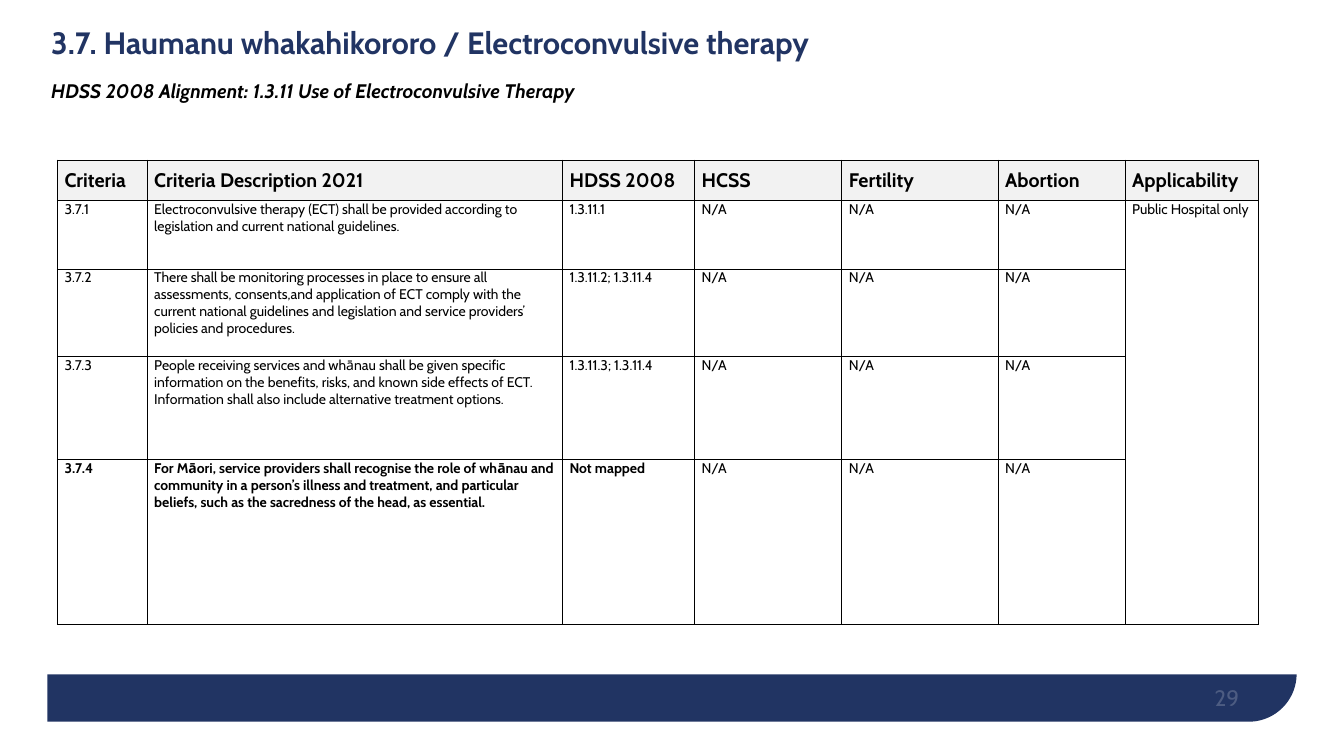
from lxml.etree import SubElement
from pptx import Presentation
from pptx.dml.color import RGBColor
from pptx.enum.shapes import MSO_SHAPE
from pptx.enum.text import MSO_ANCHOR, PP_ALIGN
from pptx.oxml.ns import qn
from pptx.util import Inches, Pt

FONT = "Cabin"
NAVY = RGBColor(0x21, 0x34, 0x63)
WHITE = RGBColor(0xFF, 0xFF, 0xFF)
BLACK = RGBColor(0, 0, 0)
HEADER_GREY = RGBColor(0xF2, 0xF2, 0xF2)

SLIDE_WIDTH, SLIDE_HEIGHT = 13.33, 7.5
BAND_TOP = 6.69
COLUMN_WIDTHS = [0.89, 4.12, 1.31, 1.46, 1.55, 1.26, 1.32]
ROW_HEIGHTS = [0.4, 0.68, 0.87, 1.02, 1.64]

HEADINGS = ["Criteria", "Criteria Description 2021", "HDSS 2008", "HCSS",
            "Fertility", "Abortion", "Applicability"]
CRITERIA = [
    ("3.7.1", "Electroconvulsive therapy (ECT) shall be provided according to "
     "legislation and current national guidelines.", "1.3.11.1"),
    ("3.7.2", "There shall be monitoring processes in place to ensure all "
     "assessments, consents,and application of ECT comply with the current "
     "national guidelines and legislation and service providers’ policies and "
     "procedures.", "1.3.11.2; 1.3.11.4"),
    ("3.7.3", "People receiving services and whānau shall be given specific "
     "information on the benefits, risks, and known side effects of ECT. "
     "Information shall also include alternative treatment options.",
     "1.3.11.3; 1.3.11.4"),
    ("3.7.4", "For Māori, service providers shall recognise the role of whānau "
     "and community in a person’s illness and treatment, and particular "
     "beliefs, such as the sacredness of the head, as essential.",
     "Not mapped"),
]


def style_paragraph(paragraph, size, color, bold=False, italic=False):
    """Set the font of a whole paragraph."""
    font = paragraph.font
    font.name, font.size = FONT, Pt(size)
    font.bold, font.italic = bold, italic
    font.color.rgb = color


def add_panel(slide, preset, left, top, width, height, color):
    """Add a plain filled shape without outline or shadow."""
    panel = slide.shapes.add_shape(preset, Inches(left), Inches(top),
                                   Inches(width), Inches(height))
    panel.shadow.inherit = False
    panel.fill.solid()
    panel.fill.fore_color.rgb = color
    panel.line.fill.background()
    return panel


def add_text_frame(slide, left, top, width, height, anchor):
    """Add a wrapping text box and return its text frame."""
    box = slide.shapes.add_textbox(Inches(left), Inches(top),
                                   Inches(width), Inches(height))
    frame = box.text_frame
    frame.word_wrap = True
    frame.vertical_anchor = anchor
    return frame


def add_footer(slide, page):
    """Add the navy band with its rounded corner and the page number."""
    band = add_panel(slide, MSO_SHAPE.ROUND_1_RECTANGLE,
                     0.47, 0.37, 12.39, 6.79, NAVY)
    band.adjustments[0] = 0.07
    band.rotation = 180
    band._element.spPr.find(qn("a:xfrm")).set("flipH", "1")
    add_panel(slide, MSO_SHAPE.RECTANGLE, 0, 0, SLIDE_WIDTH, BAND_TOP, WHITE)

    frame = add_text_frame(slide, 9.29, 6.65, 3, 0.4, MSO_ANCHOR.BOTTOM)
    frame.margin_left = frame.margin_right = 0
    frame.margin_top = frame.margin_bottom = 0
    number = frame.paragraphs[0]
    number.text = page
    number.alignment = PP_ALIGN.RIGHT
    style_paragraph(number, 16, WHITE)
    for color in number._p.iter(qn("a:srgbClr")):
        SubElement(color, qn("a:alpha"), val="20000")


def add_title(slide, heading, alignment_note):
    """Add the section heading with the alignment note below it."""
    frame = add_text_frame(slide, 0.41, 0.17, 12.39, 0.96, MSO_ANCHOR.MIDDLE)
    title = frame.paragraphs[0]
    title.text = heading
    style_paragraph(title, 22, NAVY, bold=True)
    note = frame.add_paragraph()
    note.text = alignment_note
    note.space_before = Pt(15)
    style_paragraph(note, 14, BLACK, bold=True, italic=True)
    for paragraph in frame.paragraphs:
        paragraph.line_spacing = 0.9


def add_borders(cell):
    """Draw a thin black line on each side of a cell."""
    properties = cell._tc.get_or_add_tcPr()
    for side in ("a:lnL", "a:lnR", "a:lnT", "a:lnB"):
        line = SubElement(properties, qn(side), w=str(Pt(1)))
        fill = SubElement(line, qn("a:solidFill"))
        SubElement(fill, qn("a:srgbClr"), val=str(BLACK))


def fill_cell(cell, text, is_header, bold):
    """Write and format one table cell."""
    cell.margin_left = cell.margin_right = Inches(0.07)
    cell.margin_top = cell.margin_bottom = 0
    cell.vertical_anchor = MSO_ANCHOR.MIDDLE if is_header else MSO_ANCHOR.TOP
    add_borders(cell)
    if is_header:
        cell.fill.solid()
        cell.fill.fore_color.rgb = HEADER_GREY
    else:
        cell.fill.background()
    paragraph = cell.text_frame.paragraphs[0]
    paragraph.text = text
    style_paragraph(paragraph, 14 if is_header else 10, BLACK, bold)


def add_criteria_table(slide):
    """Add the table that maps each criterion to the earlier standards."""
    rows = [HEADINGS] + [[*criterion, "N/A", "N/A", "N/A", ""]
                         for criterion in CRITERIA]
    rows[1][-1] = "Public Hospital only"
    table = slide.shapes.add_table(
        len(rows), len(HEADINGS), Inches(0.57), Inches(1.59),
        Inches(sum(COLUMN_WIDTHS)), Inches(sum(ROW_HEIGHTS))).table
    table.horz_banding = False
    for column, width in zip(table.columns, COLUMN_WIDTHS):
        column.width = Inches(width)
    for row, height in zip(table.rows, ROW_HEIGHTS):
        row.height = Inches(height)

    for r, row in enumerate(rows):
        for c, text in enumerate(row):
            is_header = r == 0
            bold = is_header or (row[0] == "3.7.4" and c < 3)
            fill_cell(table.cell(r, c), text, is_header, bold)
    last = len(HEADINGS) - 1
    table.cell(1, last).merge(table.cell(len(CRITERIA), last))


def main():
    """Build the slide and save it."""
    presentation = Presentation()
    presentation.slide_width = Inches(SLIDE_WIDTH)
    presentation.slide_height = Inches(SLIDE_HEIGHT)
    slide = presentation.slides.add_slide(presentation.slide_layouts[6])
    add_footer(slide, "29")
    add_title(slide, "3.7. Haumanu whakahikororo / Electroconvulsive therapy",
              "HDSS 2008 Alignment: 1.3.11 Use of Electroconvulsive Therapy")
    add_criteria_table(slide)
    presentation.save("out.pptx")


if __name__ == "__main__":
    main()
